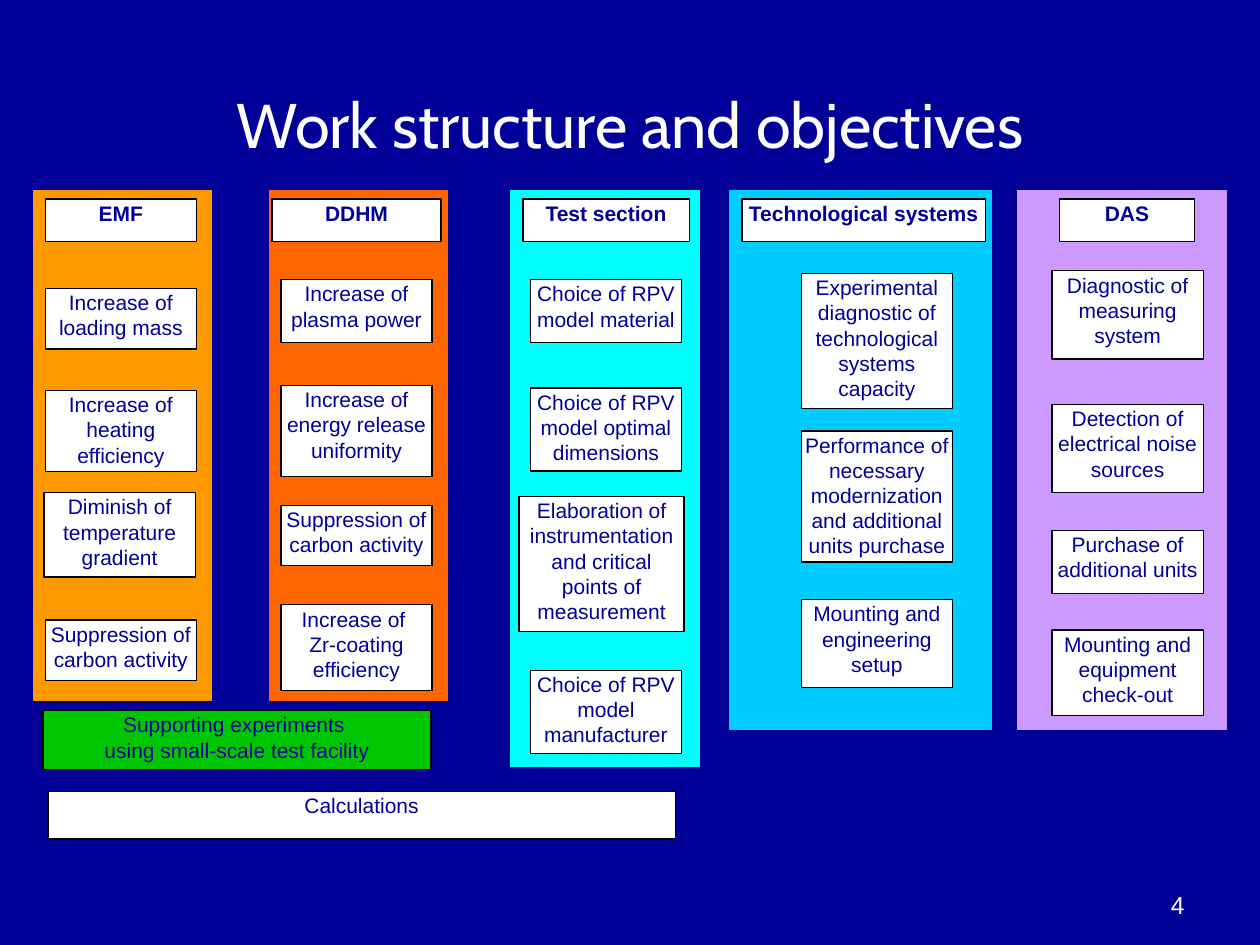
"""Build the slide that shows the work structure and objectives."""
import pptx
import pptx.dml.color
import pptx.enum.shapes
import pptx.enum.text
import pptx.util

ALIGN = pptx.enum.text.PP_ALIGN
ANCHOR = pptx.enum.text.MSO_ANCHOR
NAVY, WHITE, BLACK = "000099", "FFFFFF", "000000"
GRID_COLUMNS, GRID_ROWS = 100, 75
BAND_TOP, HEADER_TOP, HEADER_HEIGHT = 15.1, 15.8, 3.4
TASK_WIDTH = 12

STREAMS = [
    {"name": "DAS", "color": "CC99FF", "band": (80.8, 16.5, 42.8), "header": (84.1, 10.7),
     "task_left": 83.5, "tasks": [
         ("Diagnostic of measuring system", 21.5, 7),
         ("Detection of electrical noise sources", 32.1, 7),
         ("Purchase of additional units", 42.1, 5),
         ("Mounting and equipment check-out", 50, 6.8)]},
    {"name": "Technological systems", "color": "00CCFF", "band": (57.9, 20.8, 42.8),
     "header": (58.9, 19.3), "task_left": 63.6, "tasks": [
         ("Experimental diagnostic of technological systems capacity", 21.7, 10.7),
         ("Performance of necessary modernization and additional units purchase", 34.2, 10.4),
         ("Mounting and engineering setup", 47.6, 7)]},
    {"name": "Test section", "color": "00FFFF", "band": (40.5, 15, 45.7), "header": (41.5, 13.2),
     "task_left": 42.1, "tasks": [
         ("Choice of RPV model material", 22.2, 5),
         ("Choice of RPV model optimal dimensions", 30.8, 6.6),
         ("Elaboration of instrumentation and critical points of measurement",
          39.4, 10.7, 41.2, 13.1),
         ("Choice of RPV model manufacturer", 53.2, 6.6)]},
    {"name": "DDHM", "color": "FF6600", "band": (21.4, 14.1, 40.5), "header": (21.6, 13.4),
     "task_left": 22.3, "tasks": [
         ("Increase of plasma power", 22.2, 5),
         ("Increase of energy release uniformity", 30.6, 7.2),
         ("Suppression of carbon activity", 40.1, 4.8),
         ("Increase of \vZr-coating efficiency", 48, 6.8)]},
    {"name": "EMF", "color": "FF9900", "band": (2.7, 14.1, 40.5), "header": (3.6, 12),
     "task_left": 3.6, "tasks": [
         ("Increase of loading mass", 22.9, 4.8),
         ("Increase of heating efficiency", 31, 6.4),
         ("Diminish of temperature gradient", 39.1, 6.7, 3.5, TASK_WIDTH),
         ("Suppression of carbon activity", 49.2, 4.8)]},
]


def rgb(value):
    """Return the colour of a hex string."""
    return pptx.dml.color.RGBColor.from_string(value)


class SlideBuilder:
    """Hold the style and the current slide, and draw each kind of element."""

    def __init__(self, presentation, font="Arial", title_font="Cabin"):
        """Add a title-only slide with a plain background."""
        self.font, self.title_font = font, title_font
        self.column = presentation.slide_width / GRID_COLUMNS
        self.row = presentation.slide_height / GRID_ROWS
        self.slide = presentation.slides.add_slide(presentation.slide_layouts[5])
        self.slide.background.fill.solid()
        self.slide.background.fill.fore_color.rgb = rgb(NAVY)

    def place(self, left, top, width, height):
        """Turn grid columns and rows into slide lengths."""
        return (round(left * self.column), round(top * self.row),
                round(width * self.column), round(height * self.row))

    def label(self, shape, text, size, color, font=None, align=ALIGN.CENTER,
              anchor=ANCHOR.TOP, bold=False):
        """Put one formatted paragraph into a shape."""
        frame = shape.text_frame
        frame.word_wrap = True
        frame.auto_size = pptx.enum.text.MSO_AUTO_SIZE.NONE
        frame.vertical_anchor = anchor
        paragraph = frame.paragraphs[0]
        paragraph.text = text
        paragraph.alignment = align
        paragraph.font.name = font or self.font
        paragraph.font.size = pptx.util.Pt(size)
        paragraph.font.bold = bold
        paragraph.font.color.rgb = rgb(color)

    def title(self, text, *area):
        """Move and fill the title placeholder."""
        shape = self.slide.shapes.title
        shape.left, shape.top, shape.width, shape.height = self.place(*area)
        self.label(shape, text, 36, WHITE, font=self.title_font, anchor=ANCHOR.MIDDLE)

    def page_number(self, text, *area):
        """Add the page number."""
        shape = self.slide.shapes.add_textbox(*self.place(*area))
        self.label(shape, text, 14, WHITE, align=ALIGN.RIGHT, anchor=ANCHOR.BOTTOM)

    def rectangle(self, fill, line, *area):
        """Add a flat rectangle."""
        shape = self.slide.shapes.add_shape(
            pptx.enum.shapes.MSO_SHAPE.RECTANGLE, *self.place(*area))
        shape.shadow.inherit = False
        shape.fill.solid()
        shape.fill.fore_color.rgb = rgb(fill)
        shape.line.color.rgb = rgb(line)
        shape.line.width = pptx.util.Pt(0.75)
        return shape

    def box(self, text, *area, fill=WHITE, bold=False):
        """Add a bordered rectangle with a label."""
        shape = self.rectangle(fill, BLACK, *area)
        frame = shape.text_frame
        frame.margin_left = frame.margin_right = pptx.util.Inches(0.02)
        frame.margin_top = frame.margin_bottom = pptx.util.Inches(0.01)
        self.label(shape, text, 12, NAVY, bold=bold)

    def stream(self, name, color, band, header, task_left, tasks):
        """Add a coloured band with its header and task boxes."""
        band_left, band_width, band_height = band
        self.rectangle(color, color, band_left, BAND_TOP, band_width, band_height)
        header_left, header_width = header
        self.box(name, header_left, HEADER_TOP, header_width, HEADER_HEIGHT, bold=True)
        for text, top, height, *custom in tasks:
            left, width = custom or (task_left, TASK_WIDTH)
            self.box(text, left, top, width, height)


def main():
    """Build and save the presentation."""
    presentation = pptx.Presentation()
    presentation.slide_width = pptx.util.Inches(10)
    presentation.slide_height = pptx.util.Inches(7.5)
    builder = SlideBuilder(presentation)
    builder.page_number("4", 71.7, 68.3, 23.3, 5.2)
    builder.title("Work structure and objectives", 5, 5.2, 90, 9.1)
    for stream in STREAMS:
        builder.stream(**stream)
    builder.box("Supporting experiments \vusing small-scale test facility",
                3.4, 56.4, 30.8, 4.7, fill="00C600")
    builder.box("Calculations", 3.8, 62.8, 49.8, 3.8)
    presentation.save("out.pptx")


if __name__ == "__main__":
    main()
